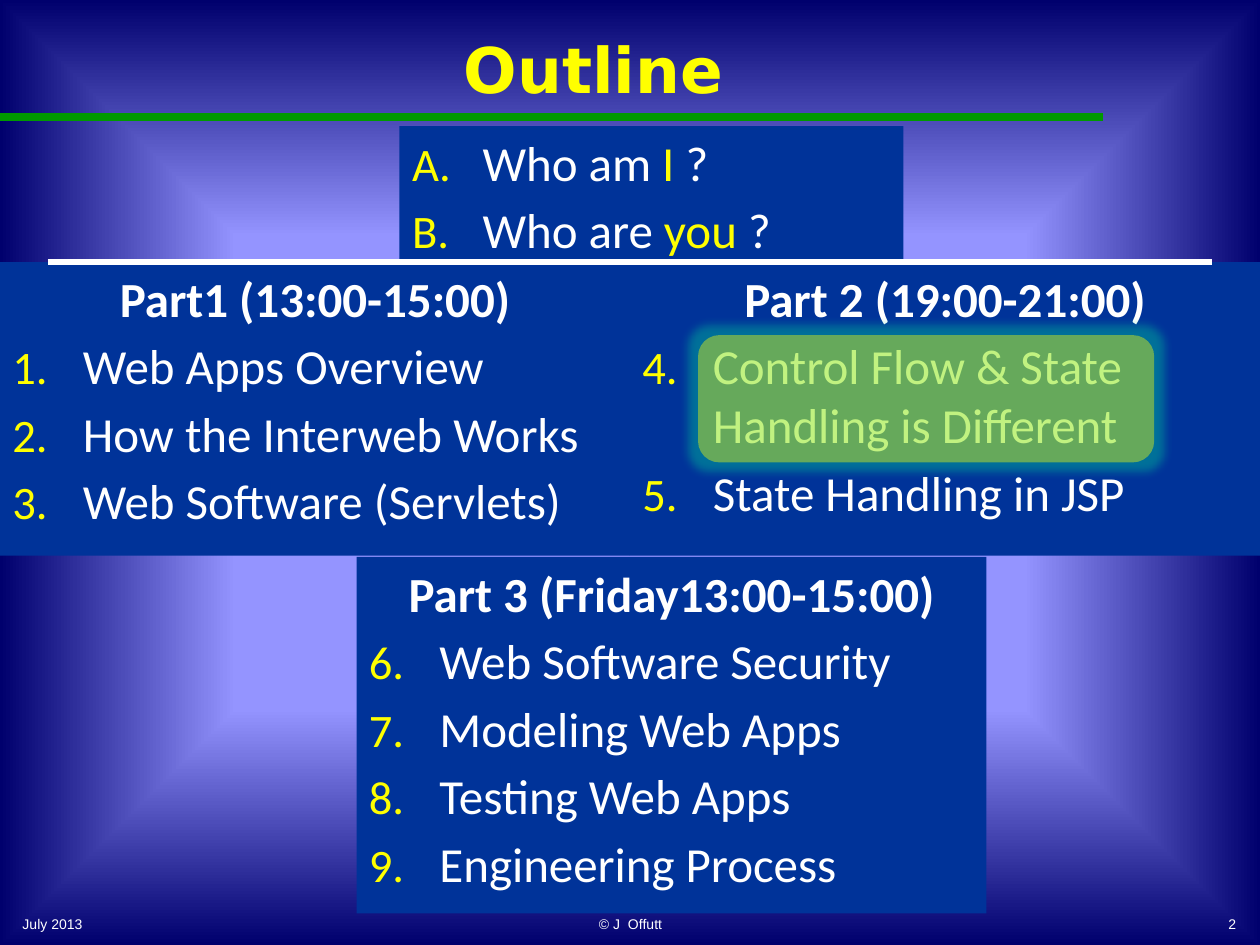
from lxml.etree import SubElement
from pptx import Presentation
from pptx.dml.color import RGBColor
from pptx.enum.shapes import MSO_CONNECTOR, MSO_SHAPE
from pptx.enum.text import MSO_ANCHOR, MSO_AUTO_SIZE, PP_ALIGN
from pptx.oxml import parse_xml
from pptx.oxml.ns import nsdecls, qn
from pptx.util import Inches, Pt

COLORS = {name: RGBColor.from_string(value) for name, value in {
    "panel": "003399", "text": "FFFFFF", "accent": "FFFF00", "title_rule": "009900",
}.items()}
BACKGROUND = {"center": "9494FF", "edge": "00006D"}
GLOW = "00CC99"


def add_text(paragraph, text, size, font, color="text", bold=False):
    run = paragraph.add_run()
    run.text = text
    run.font.size = Pt(size)
    run.font.name = font
    run.font.bold = bold
    run.font.color.rgb = COLORS[color]


def number_paragraph(paragraph, scheme, start):
    """Give the paragraph a hanging, yellow automatic number."""
    properties = paragraph._p.get_or_add_pPr()
    properties.set("marL", str(Inches(0.56)))
    properties.set("indent", str(-Inches(0.56)))
    bullet_color = SubElement(properties, qn("a:buClr"))
    SubElement(bullet_color, qn("a:srgbClr"), val=str(COLORS["accent"]))
    SubElement(properties, qn("a:buSzPct"), val="95000")
    SubElement(properties, qn("a:buFont"), typeface="Calibri")
    SubElement(properties, qn("a:buAutoNum"), type=scheme, startAt=str(start))


prs = Presentation()
prs.slide_width, prs.slide_height = Inches(10), Inches(7.5)
slide = prs.slides.add_slide(prs.slide_layouts[1])
shapes = slide.shapes

# Background: light centre fading to dark edges
slide.background.fill.solid()
background = slide.background._cSld.bg.bgPr
background.replace(background.find(qn("a:solidFill")), parse_xml(
    f'<a:gradFill {nsdecls("a")} rotWithShape="0"><a:gsLst>'
    f'<a:gs pos="50000"><a:srgbClr val="{BACKGROUND["center"]}"/></a:gs>'
    f'<a:gs pos="100000"><a:srgbClr val="{BACKGROUND["edge"]}"/></a:gs></a:gsLst>'
    '<a:path path="rect"><a:fillToRect l="50000" t="50000" r="50000" b="50000"/></a:path>'
    '</a:gradFill>'))

# Title
title = shapes.title
title.left, title.top = Inches(0.17), Inches(0.08)
title.width, title.height = Inches(9.08), Inches(0.92)
title.text_frame.auto_size = MSO_AUTO_SIZE.NONE
title.text_frame.vertical_anchor = MSO_ANCHOR.MIDDLE
title_line = title.text_frame.paragraphs[0]
title_line.alignment = PP_ALIGN.CENTER
add_text(title_line, "Outline", 36, "DejaVu Sans", "accent", bold=True)

# Outline panels: left, top, width, height, heading, scheme, first number, items
# An item is a list of runs, every second one highlighted
panels = [
    (3.17, 1, 4, 1.08, None, "alphaUcPeriod", 1,
     [["Who am ", "I", " ?"], ["Who are ", "you", " ?"]]),
    (0, 2.08, 5, 2.33, "Part1 (13:00-15:00)", "arabicPeriod", 1,
     [["Web Apps Overview"], ["How the Interweb Works"], ["Web Software (Servlets)"]]),
    (5, 2.08, 5, 2.33, "Part 2 (19:00-21:00)", "arabicPeriod", 4,
     [["Control Flow & State Handling is Different"], ["State Handling in JSP"]]),
    (2.83, 4.42, 5, 2.83, "Part 3 (Friday13:00-15:00)", "arabicPeriod", 6,
     [["Web Software Security"], ["Modeling Web Apps"], ["Testing Web Apps"],
      ["Engineering Process"]]),
]
for left, top, width, height, heading, scheme, start, items in panels:
    box = [Inches(value) for value in (left, top, width, height)]
    if heading:
        panel = shapes.add_textbox(*box)
    else:
        panel = shapes.placeholders[1]
        panel.left, panel.top, panel.width, panel.height = box
    panel.fill.solid()
    panel.fill.fore_color.rgb = COLORS["panel"]
    frame = panel.text_frame
    frame.word_wrap = True
    frame.auto_size = MSO_AUTO_SIZE.NONE
    frame.vertical_anchor = MSO_ANCHOR.TOP
    paragraph = frame.paragraphs[0]
    paragraph.space_before = Pt(0)
    if heading:
        paragraph.alignment = PP_ALIGN.CENTER
        add_text(paragraph, heading, 28, "Calibri", bold=True)
    for index, item in enumerate(items):
        if heading or index:
            paragraph = frame.add_paragraph()
            paragraph.space_before = Pt(5)
        number_paragraph(paragraph, scheme, start)
        for position, text in enumerate(item):
            add_text(paragraph, text, 28, "Calibri", "accent" if position % 2 else "text")

# Rules under the title and above the parts
for start_x, end_x, y, color, weight in [
    (0, 8.75, 0.93, "title_rule", 4.5),
    (0.38, 9.62, 2.08, "text", 3),
]:
    rule = shapes.add_connector(
        MSO_CONNECTOR.STRAIGHT, Inches(start_x), Inches(y), Inches(end_x), Inches(y))
    rule.line.color.rgb = COLORS[color]
    rule.line.width = Pt(weight)
    SubElement(rule._element.spPr, qn("a:effectLst"))

# Glowing highlight over the current topic
highlight = shapes.add_shape(
    MSO_SHAPE.ROUNDED_RECTANGLE, Inches(5.54), Inches(2.66), Inches(3.62), Inches(1.01))
highlight.fill.solid()
highlight.fill.fore_color.rgb = COLORS["accent"]
highlight.line.fill.background()
highlight.shadow.inherit = False
properties = highlight._element.spPr
fill_color = properties.find(qn("a:solidFill")).find(qn("a:srgbClr"))
SubElement(fill_color, qn("a:alpha"), val="40000")
glow = SubElement(properties.find(qn("a:effectLst")), qn("a:glow"), rad=str(Pt(11)))
glow_color = SubElement(glow, qn("a:srgbClr"), val=GLOW)
SubElement(glow_color, qn("a:alpha"), val="40000")

# Footer
for left, width, text, alignment in [
    (0.08, 2.08, "July 2013", PP_ALIGN.LEFT),
    (3.42, 3.17, "© J  Offutt", PP_ALIGN.CENTER),
    (7.83, 2.08, "2", PP_ALIGN.RIGHT),
]:
    footer = shapes.add_textbox(Inches(left), Inches(7.17), Inches(width), Inches(0.33))
    footer.text_frame.word_wrap = True
    footer.text_frame.vertical_anchor = MSO_ANCHOR.MIDDLE
    footer_line = footer.text_frame.paragraphs[0]
    footer_line.alignment = alignment
    add_text(footer_line, text, 8, "Arial")

prs.save("out.pptx")
